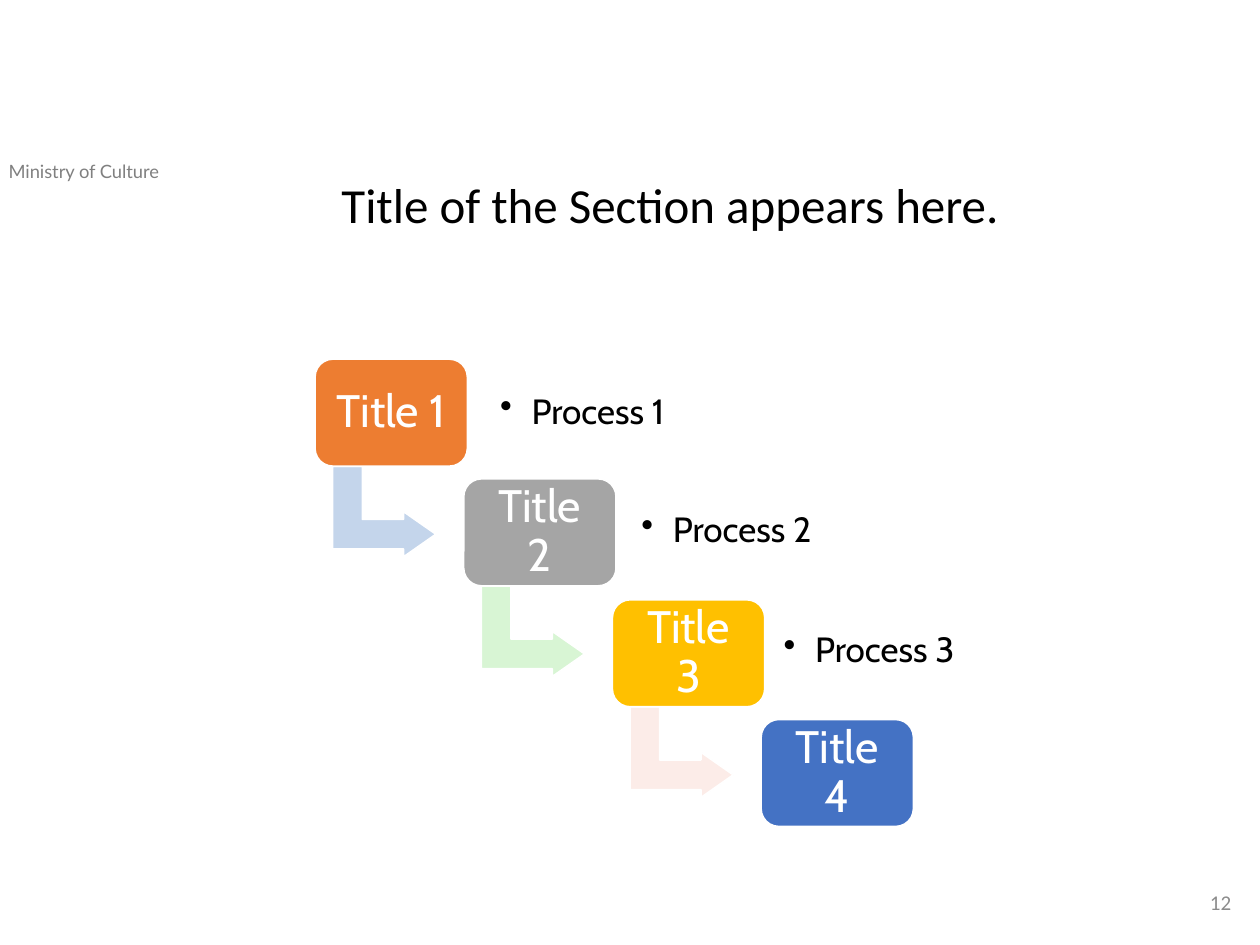
from lxml.etree import SubElement
from pptx import Presentation
from pptx.dml.color import RGBColor
from pptx.enum.shapes import MSO_SHAPE as Shape
from pptx.enum.text import MSO_ANCHOR as Anchor, MSO_AUTO_SIZE as AutoSize, PP_ALIGN as Align
from pptx.oxml.ns import qn
from pptx.util import Pt

PX = 9144  # EMU per px, 100 px to the inch
COLORS = {"header": "808080", "number": "8C8C8C", "text": "000000", "white": "FFFFFF"}
STEPS = [  # box fill, arrow fill, process left, process width
    ("ED7D31", "C4D5EB", 386, 160),
    ("A5A5A5", "D8F5D4", 498, 235),
    ("FFC000", "FCECE8", 611, 197),
    ("4472C4", None, None, None),
]
INSETS = ("margin_left", "margin_top", "margin_right", "margin_bottom")


def write(shape, text, font, size, color, align=Align.LEFT, spacing=1.0, bullet=False, **frame_format):
    frame = shape.text_frame
    frame.word_wrap = True
    for name, value in frame_format.items():
        setattr(frame, name, value)
    paragraph = frame.paragraphs[0]
    paragraph.alignment = align
    paragraph.line_spacing = spacing
    if bullet:
        paragraph.level = 1
        props = paragraph._p.get_or_add_pPr()
        props.set("marL", str(25 * PX))
        props.set("indent", str(-25 * PX))
        SubElement(props, qn("a:buChar")).set("char", "•")
    run = paragraph.add_run()
    run.text = text
    run.font.name = font
    run.font.size = Pt(size)
    run.font.color.rgb = RGBColor.from_string(COLORS[color])


def add_block(kind, left, top, width, height, fill, adjustments):
    block = slide.shapes.add_shape(kind, left * PX, top * PX, width * PX, height * PX)
    for index, value in enumerate(adjustments):
        block.adjustments[index] = value
    block.shadow.inherit = False
    block.fill.solid()
    block.fill.fore_color.rgb = RGBColor.from_string(fill)
    block.line.color.rgb = RGBColor.from_string(COLORS["white"])
    block.line.width = Pt(1)
    return block


prs = Presentation()
prs.slide_width, prs.slide_height = 1000 * PX, 750 * PX
slide = prs.slides.add_slide(prs.slide_layouts[5])

title = slide.shapes.title
title.left, title.top, title.width, title.height = 261 * PX, 139 * PX, 638 * PX, 79 * PX
write(title, "Title of the Section appears here.", "Calibri", 28, "text", spacing=0.9,
      vertical_anchor=Anchor.TOP, auto_size=AutoSize.NONE)

header = slide.shapes.add_textbox(-3 * PX, 122 * PX, 218 * PX, 28 * PX)
write(header, "Ministry of Culture", "Lato", 10.5, "header", auto_size=AutoSize.SHAPE_TO_FIT_TEXT)

page_number = slide.shapes.add_textbox(762 * PX, 696 * PX, 225 * PX, 40 * PX)
write(page_number, "12", "Calibri", 12, "number", Align.RIGHT, vertical_anchor=Anchor.MIDDLE)

step_format = {"vertical_anchor": Anchor.MIDDLE, **dict.fromkeys(INSETS, 11 * PX)}
for i, (box_fill, arrow_fill, process_left, process_width) in enumerate(STEPS):
    left = 250 + 118 * i
    top = 285 + round(286 * i / 3)
    if arrow_fill:
        arrow = add_block(Shape.BENT_UP_ARROW, left + 19, top + 80, 72, 82,
                          arrow_fill, (0.328, 0.25, 0.358))
        arrow.rotation = 90
    step = add_block(Shape.ROUNDED_RECTANGLE, left, top, 121, 85, box_fill, (0.167,))
    write(step, f"Title {i + 1}", "Cabin", 26, "white", Align.CENTER, 0.9, **step_format)
    if arrow_fill:
        process_top = 293 + round(94.5 * i)
        process = slide.shapes.add_textbox(process_left * PX, process_top * PX,
                                           process_width * PX, 69 * PX)
        write(process, f"Process {i + 1}", "Cabin", 20, "text", spacing=0.9, bullet=True, **step_format)

prs.save("out.pptx")
